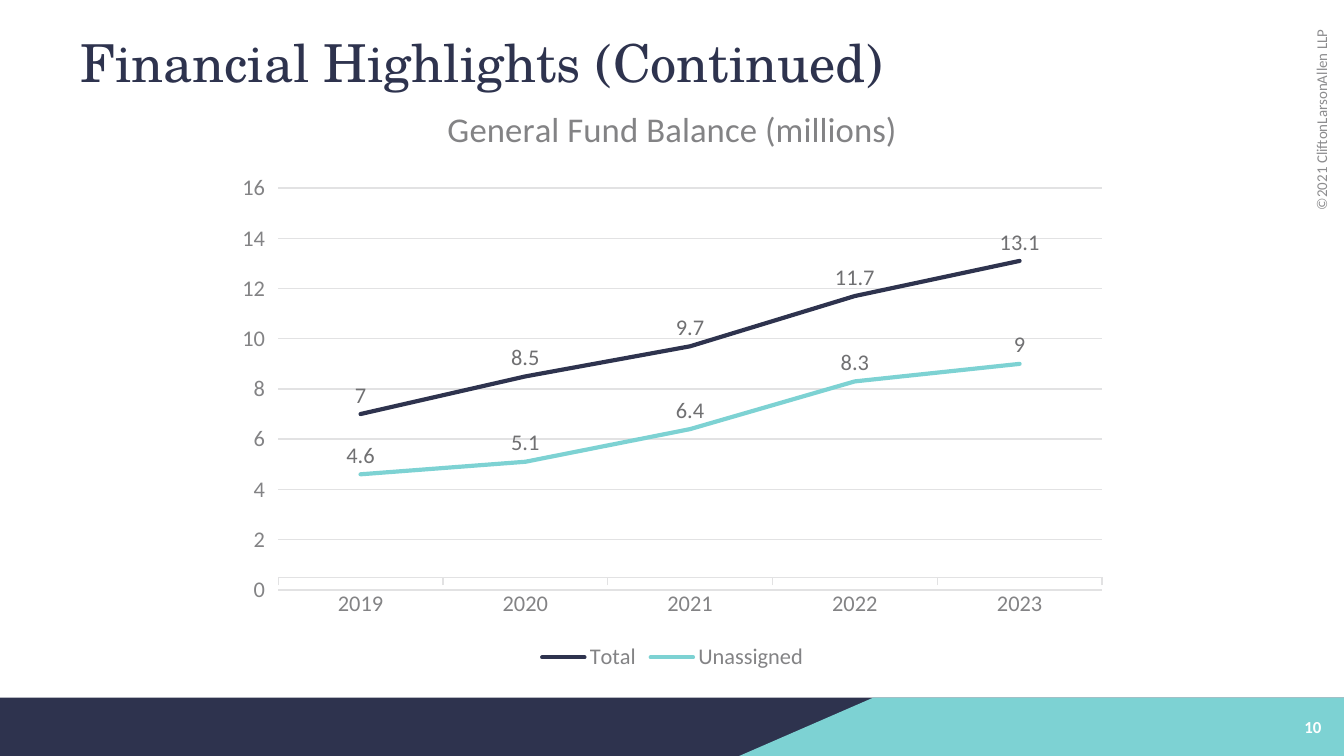
from lxml import etree
from pptx import Presentation
from pptx.chart.data import CategoryChartData
from pptx.dml.color import RGBColor
from pptx.enum.chart import XL_CHART_TYPE as ChartType, XL_LABEL_POSITION as LabelPosition
from pptx.enum.chart import XL_LEGEND_POSITION as LegendPosition, XL_TICK_LABEL_POSITION as TickLabels
from pptx.enum.chart import XL_TICK_MARK as TickMark
from pptx.enum.shapes import MSO_SHAPE as Preset
from pptx.enum.text import MSO_ANCHOR as Anchor, PP_ALIGN as Align
from pptx.oxml import parse_xml
from pptx.oxml.ns import nsdecls
from pptx.util import Inches, Pt

COLORS = {
    "navy": "2E334E",
    "teal": "7DD2D3",
    "white": "FFFFFF",
    "copyright": "8C8C8E",
    "axis": "838385",
    "label": "707072",
    "grid": "E2E2E3",
}
BODY_FONT = "Calibri"
TITLE_FONT = "TeX Gyre Schola"


def style_font(font, size, color, name=BODY_FONT, bold=False):
    font.size = Pt(size)
    font.name = name
    font.bold = bold
    font.color.rgb = RGBColor.from_string(COLORS[color])


def add_text(box, text, size, color, name=BODY_FONT, bold=False, align=Align.LEFT):
    textbox = slide.shapes.add_textbox(*[Inches(value) for value in box])
    frame = textbox.text_frame
    frame.word_wrap = True
    frame.vertical_anchor = Anchor.MIDDLE
    paragraph = frame.paragraphs[0]
    paragraph.alignment = align
    run = paragraph.add_run()
    run.text = text
    style_font(run.font, size, color, name, bold)
    return textbox


# Widescreen 16:9 slide
presentation = Presentation()
presentation.slide_width = Inches(10)
presentation.slide_height = Inches(10 * 9 / 16)
slide = presentation.slides.add_slide(presentation.slide_layouts[6])

# Footer band with slanted teal end
band_top = Inches(5.19)
band_bottom = presentation.slide_height
navy_band = slide.shapes.add_shape(
    Preset.RECTANGLE, 0, band_top, presentation.slide_width, band_bottom - band_top
)
builder = slide.shapes.build_freeform(Inches(6.5), band_top)
corners = [(10, band_top), (10, band_bottom), (5.5, band_bottom)]
builder.add_line_segments([(Inches(x), y) for x, y in corners], close=True)
teal_band = builder.convert_to_shape()
for shape, color in ((navy_band, "navy"), (teal_band, "teal")):
    shape.shadow.inherit = False
    shape.fill.solid()
    shape.fill.fore_color.rgb = RGBColor.from_string(COLORS[color])
    shape.line.fill.background()

# Title, copyright line and page number
copyright_line = add_text(
    (8.86, 0.92, 1.94, 0.34), "©2021 CliftonLarsonAllen LLP", 8, "copyright", align=Align.RIGHT
)
copyright_line.rotation = 270
add_text((0.5, 0.08, 9, 0.75), "Financial Highlights (Continued)", 28, "navy", TITLE_FONT)
add_text((9.5, 5.22, 0.43, 0.38), "10", 9, "white", bold=True, align=Align.RIGHT)

# Fund balance chart
chart_width, chart_height = 6.67, 4.44
chart_data = CategoryChartData()
chart_data.categories = ["2019", "2020", "2021", "2022", "2023"]
chart_data.add_series("Total", [7, 8.5, 9.7, 11.7, 13.1])
chart_data.add_series("Unassigned", [4.6, 5.1, 6.4, 8.3, 9])
chart = slide.shapes.add_chart(
    ChartType.LINE, Inches(1.67), Inches(0.59),
    Inches(chart_width), Inches(chart_height), chart_data,
).chart
style_font(chart.font, 12, "axis")

# Chart title and legend
chart.has_title = True
title_run = chart.chart_title.text_frame.paragraphs[0].add_run()
title_run.text = "General Fund Balance (millions)"
style_font(title_run.font, 18.6, "axis")
chart.chart_title.include_in_layout = False
chart.has_legend = True
chart.legend.position = LegendPosition.BOTTOM
chart.legend.include_in_layout = False
style_font(chart.legend.font, 12, "axis")

# Axes: the category line sits at 0.5
category_axis, value_axis = chart.category_axis, chart.value_axis
value_axis.minimum_scale = 0
value_axis.maximum_scale = 16
value_axis.major_unit = 2
value_axis.crosses_at = 0.5
value_axis.has_major_gridlines = True
value_axis.format.line.fill.background()
for axis in (category_axis, value_axis):
    axis.major_tick_mark = TickMark.OUTSIDE
    axis.tick_label_position = TickLabels.NEXT_TO_AXIS
    style_font(axis.tick_labels.font, 12, "axis")
for line in (category_axis.format.line, value_axis.major_gridlines.format.line):
    line.width = Pt(0.75)
    line.color.rgb = RGBColor.from_string(COLORS["grid"])

# Series lines with round ends, and value labels
plot = chart.plots[0]
plot.vary_by_categories = False
for series, color in zip(plot.series, ("navy", "teal")):
    series.smooth = False
    series.format.line.width = Pt(2.25)
    series.format.line.color.rgb = RGBColor.from_string(COLORS[color])
    series._element.find("{*}spPr/{*}ln").set("cap", "rnd")
    labels = series.data_labels
    labels.show_value = True
    labels.position = LabelPosition.ABOVE
    style_font(labels.font, 12, "label")

# Fixed plot area, as fractions of the chart
plot_area = plot.series[0]._element.getparent().getparent()
for old_layout in plot_area.findall("{*}layout"):
    plot_area.remove(old_layout)
layout = parse_xml(f"<c:layout {nsdecls('c')}><c:manualLayout/></c:layout>")
settings = {
    "layoutTarget": "inner", "xMode": "edge", "yMode": "edge",
    "x": 0.4 / chart_width, "y": 0.81 / chart_height,
    "w": 6.13 / chart_width, "h": 2.99 / chart_height,
}
namespace = etree.QName(layout).namespace
for tag, value in settings.items():
    etree.SubElement(layout[0], f"{{{namespace}}}{tag}").set("val", str(value))
plot_area.insert(0, layout)

presentation.save("out.pptx")
